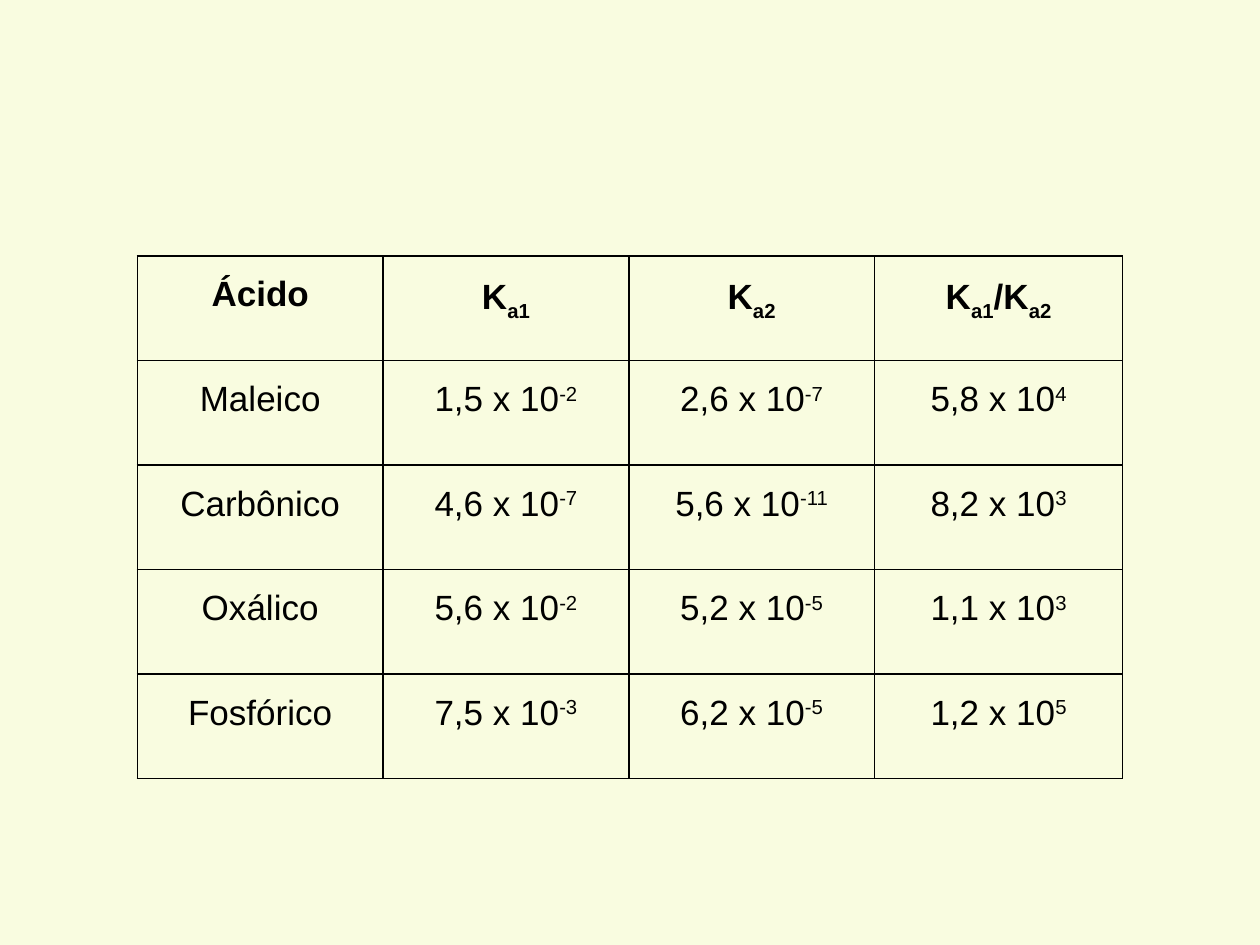
import pptx
import pptx.dml.color
import pptx.enum.text
import pptx.oxml
import pptx.oxml.ns
import pptx.util
from pptx.util import Inches

COLORS = {"background": "F9FCE0", "ink": "000000"}
ROWS = [
    ["Ácido", "K|a1", "K|a2", "K|a1|/K|a2"],
    ["Maleico", "1,5 x 10|-2", "2,6 x 10|-7", "5,8 x 10|4"],
    ["Carbônico", "4,6 x 10|-7", "5,6 x 10|-11", "8,2 x 10|3"],
    ["Oxálico", "5,6 x 10|-2", "5,2 x 10|-5", "1,1 x 10|3"],
    ["Fosfórico", "7,5 x 10|-3", "6,2 x 10|-5", "1,2 x 10|5"],
]
COLUMN_WIDTHS = [1.95, 1.95, 1.95, 1.97]
ROW_HEIGHT = 0.83


def write_text(frame, text, *, size=20, bold=False, shift=30000):
    para = frame.paragraphs[0]
    para.alignment = pptx.enum.text.PP_ALIGN.CENTER
    para.line_spacing = 1.5
    para.space_before = para.space_after = pptx.util.Pt(5)
    for index, piece in enumerate(text.split("|")):
        span = para.add_run()
        span.text = piece
        span.font.name = "Arial"
        span.font.size = pptx.util.Pt(size)
        span.font.bold = bold
        span.font.color.rgb = pptx.dml.color.RGBColor.from_string(COLORS["ink"])
        if index % 2:
            span.font._element.set("baseline", str(shift))


def draw_borders(cell):
    properties = cell._tc.get_or_add_tcPr()
    for position, side in enumerate(["lnL", "lnR", "lnT", "lnB"]):
        border = pptx.oxml.parse_xml(
            f'<a:{side} {pptx.oxml.ns.nsdecls("a")} w="{pptx.util.Pt(1)}">'
            f'<a:solidFill><a:srgbClr val="{COLORS["ink"]}"/></a:solidFill></a:{side}>'
        )
        properties.insert(position, border)


deck = pptx.Presentation()
deck.slide_width, deck.slide_height = Inches(10), Inches(7.5)
page = deck.slides.add_slide(deck.slide_layouts[6])
page.background.fill.solid()
page.background.fill.fore_color.rgb = pptx.dml.color.RGBColor.from_string(COLORS["background"])

acid_table = page.shapes.add_table(
    len(ROWS), len(COLUMN_WIDTHS), Inches(1.09), Inches(2.03),
    Inches(sum(COLUMN_WIDTHS)), Inches(ROW_HEIGHT * len(ROWS)),
).table
acid_table.first_row = False
acid_table.horz_banding = False
for column, width in zip(acid_table.columns, COLUMN_WIDTHS):
    column.width = Inches(width)

for row_index, row in enumerate(ROWS):
    acid_table.rows[row_index].height = Inches(ROW_HEIGHT)
    heading = row_index == 0
    for column_index, text in enumerate(row):
        cell = acid_table.cell(row_index, column_index)
        cell.margin_left = cell.margin_right = Inches(0.07)
        cell.margin_top = cell.margin_bottom = Inches(0)
        cell.fill.background()
        draw_borders(cell)
        write_text(cell.text_frame, text, bold=heading, shift=-25000 if heading else 30000)

deck.save("out.pptx")
